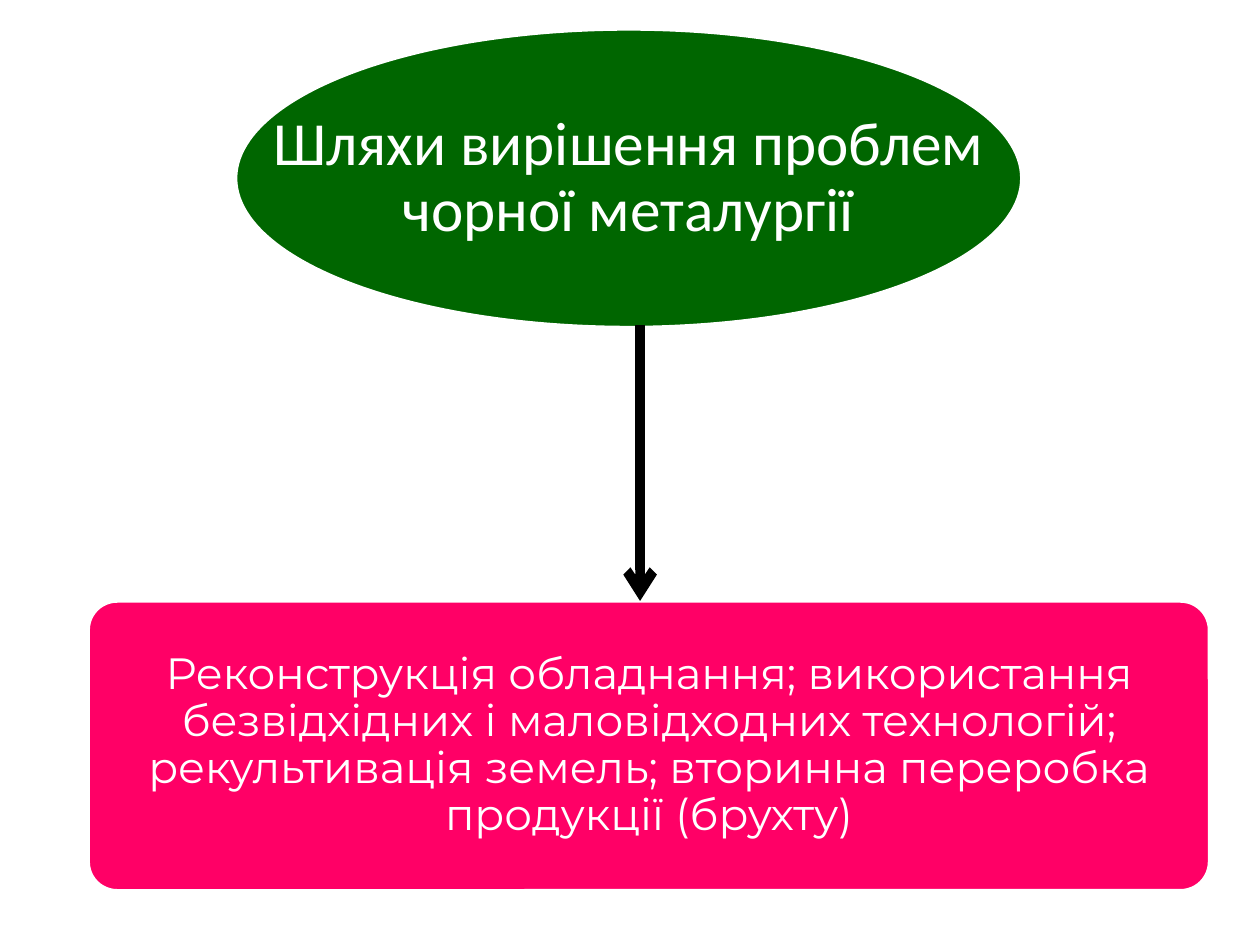
import pptx
import pptx.dml.color
import pptx.enum.shapes
import pptx.enum.text
import pptx.oxml
import pptx.oxml.ns
import pptx.util

Inches, Pt = pptx.util.Inches, pptx.util.Pt
Shapes = pptx.enum.shapes.MSO_SHAPE

TITLE = "Шляхи вирішення проблем чорної металургії"
SOLUTIONS = (
    "Реконструкція обладнання; використання безвідхідних і маловідходних "
    "технологій; рекультивація земель; вторинна переробка продукції (брухту)"
)

THEME = {
    "green": "006600", "pink": "FF0066", "white": "FFFFFF", "black": "000000",
    "title": ("Calibri", 35), "body": ("Montserrat", 25),
    "outline": 2, "arrow": 5.5,
}

# left, top, width, height in inches
TITLE_BOX = (1.87, 0.23, 6.24, 2.37)
SOLUTIONS_BOX = (0.7, 4.77, 8.9, 2.3)
ARROW_X, ARROW_TOP = 5.08, 2.58


def color(name):
    return pptx.dml.color.RGBColor.from_string(THEME[name])


def add_panel(slide, kind, box, fill):
    shape = slide.shapes.add_shape(kind, *map(Inches, box))
    shape.shadow.inherit = False
    shape.fill.solid()
    shape.fill.fore_color.rgb = color(fill)
    shape.line.color.rgb = color("white")
    shape.line.width = Pt(THEME["outline"])
    return shape


def write_text(shape, text, style, inset):
    frame = shape.text_frame
    frame.word_wrap = True
    frame.auto_size = pptx.enum.text.MSO_AUTO_SIZE.NONE
    frame.vertical_anchor = pptx.enum.text.MSO_ANCHOR.MIDDLE
    frame.margin_left = frame.margin_right = Inches(inset)
    frame.margin_top = frame.margin_bottom = Inches(inset)
    paragraph = frame.paragraphs[0]
    paragraph.alignment = pptx.enum.text.PP_ALIGN.CENTER
    paragraph.line_spacing = 0.9
    run = paragraph.add_run()
    run.text = text
    font_name, size = THEME[style]
    run.font.name = font_name
    run.font.size = Pt(size)
    run.font.color.rgb = color("white")


def add_arrow(slide, x, top, bottom):
    arrow = slide.shapes.add_connector(
        pptx.enum.shapes.MSO_CONNECTOR.STRAIGHT,
        Inches(x), Inches(top), Inches(x), Inches(bottom))
    arrow.line.color.rgb = color("black")
    arrow.line.width = Pt(THEME["arrow"])
    properties = arrow.element.spPr
    head = pptx.oxml.ns.qn("a:tailEnd")
    arrow.line._get_or_add_ln().append(
        properties.makeelement(head, {"type": "arrow"}))
    properties.append(
        properties.makeelement(pptx.oxml.ns.qn("a:effectLst"), {}))


def main():
    presentation = pptx.Presentation()
    presentation.slide_width, presentation.slide_height = Inches(10), Inches(7.5)
    slide = presentation.slides.add_slide(presentation.slide_layouts[5])

    ellipse = add_panel(slide, Shapes.OVAL, TITLE_BOX, "green")
    title = slide.shapes.title
    title.left, title.top, title.width, title.height = map(Inches, TITLE_BOX)
    write_text(title, TITLE, "title", 0.02)
    ellipse.element.addnext(title.element)  # title sits in front of the ellipse

    panel = add_panel(slide, Shapes.ROUNDED_RECTANGLE, SOLUTIONS_BOX, "pink")
    panel.adjustments[0] = 0.1
    write_text(panel, SOLUTIONS, "body", 0.1)

    add_arrow(slide, ARROW_X, ARROW_TOP, SOLUTIONS_BOX[1])
    presentation.save("out.pptx")


if __name__ == "__main__":
    main()
